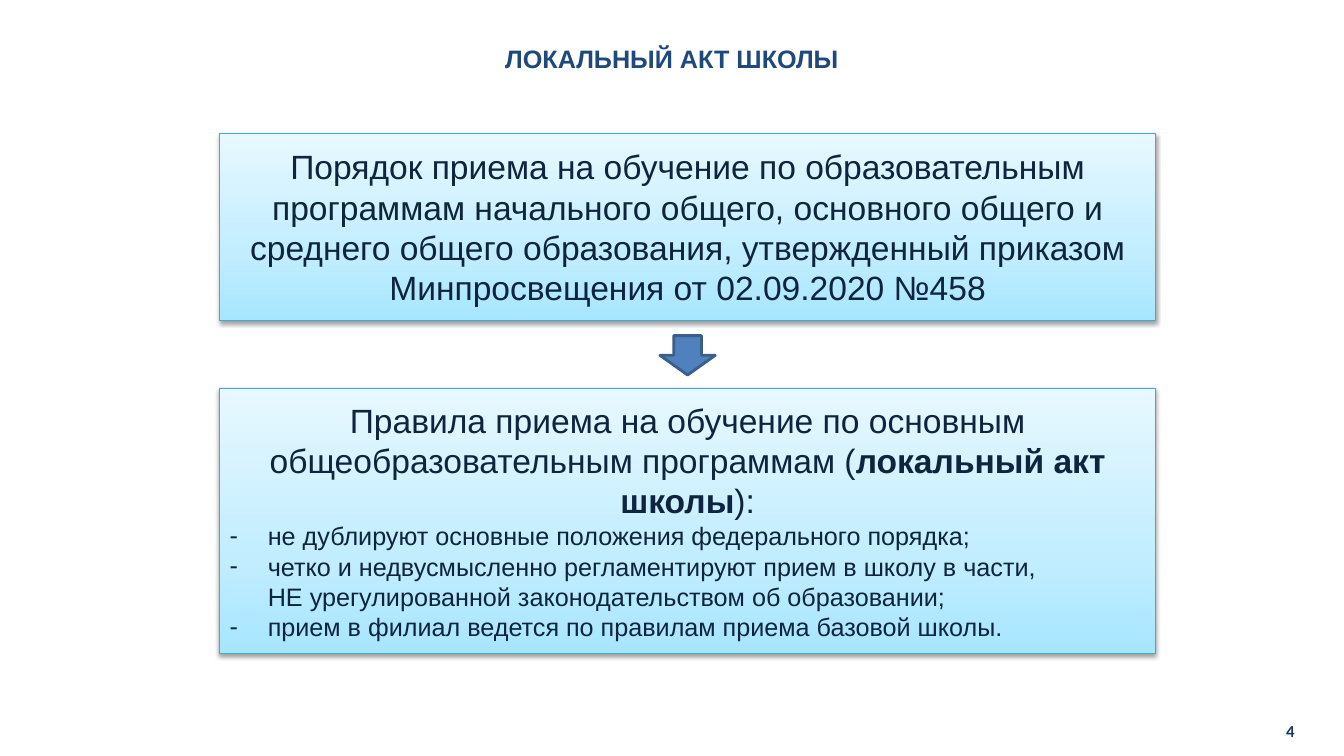
"""Build the slide on the school's local admission act."""
import pptx
import pptx.util
import pptx.dml.color
import pptx.enum.shapes
import pptx.enum.text
import pptx.oxml
import pptx.oxml.ns
from lxml import etree

Inches = pptx.util.Inches
Pt = pptx.util.Pt
ALIGN = pptx.enum.text.PP_ALIGN
ANCHOR = pptx.enum.text.MSO_ANCHOR
SHAPE = pptx.enum.shapes.MSO_SHAPE
qn = pptx.oxml.ns.qn

COLORS = {
    "title": "1F497D",
    "number": "17375E",
    "body": "0F243E",
    "arrow": "4F81BD",
    "arrow_edge": "3A5F8C",
    "panel_edge": "46AAC5",
    "shadow": "000000",
    "deep": "A7E6FF",
    "middle": "C1EDFF",
    "light": "E7F8FF",
}
PANEL_STOPS = [(0, "deep"), (35, "middle"), (100, "light")]
PANEL_LEFT, PANEL_WIDTH = 2.18, 9.29
ARROW_WIDTH = 0.55
HANGING = 0.38

TITLE_FORMAT = {"name": "Arial", "size": Pt(18), "bold": True}
NUMBER_FORMAT = {"name": "Calibri", "size": Pt(12), "bold": True}
HEAD_FORMAT = {"name": "Arial", "size": Pt(24), "bold": False}
STRONG_FORMAT = {**HEAD_FORMAT, "bold": True}
RULE_FORMAT = {**HEAD_FORMAT, "size": Pt(18)}

ORDER_TEXT = (
    "Порядок приема на обучение по образовательным программам начального общего, "
    "основного общего и среднего общего образования, утвержденный приказом "
    "Минпросвещения от 02.09.2020 №458"
)
RULES_HEAD = [
    ("Правила приема на обучение по основным общеобразовательным программам (", HEAD_FORMAT),
    ("локальный акт школы", STRONG_FORMAT),
    ("):", HEAD_FORMAT),
]
RULES = [
    ["не дублируют основные положения федерального порядка;"],
    ["четко и недвусмысленно регламентируют прием в школу в части,",
     "НЕ урегулированной законодательством об образовании;"],
    ["прием в филиал ведется по правилам приема базовой школы."],
]


def rgb(key):
    return pptx.dml.color.RGBColor.from_string(COLORS[key])


def set_all(target, values):
    for name, value in values.items():
        setattr(target, name, value)


def add_run(paragraph, text, values, color):
    run = paragraph.add_run()
    run.text = text
    set_all(run.font, values)
    run.font.color.rgb = rgb(color)


def add_label(slide, place, text, values, color, align, anchor, margins):
    label = slide.shapes.add_textbox(*map(Inches, place))
    side, edge = map(Inches, margins)
    set_all(label.text_frame, {
        "word_wrap": True, "vertical_anchor": anchor,
        "margin_left": side, "margin_right": side,
        "margin_top": edge, "margin_bottom": edge,
    })
    paragraph = label.text_frame.paragraphs[0]
    paragraph.alignment = align
    add_run(paragraph, text, values, color)


def add_color(parent, key):
    return etree.SubElement(parent, qn("a:srgbClr"), val=COLORS[key])


def add_panel(slide, top, height, head):
    panel = slide.shapes.add_shape(
        SHAPE.RECTANGLE, *map(Inches, (PANEL_LEFT, top, PANEL_WIDTH, height)))
    panel.line.color.rgb = rgb("panel_edge")
    panel.line.width = Pt(0.75)
    panel.fill.gradient()
    panel.fill.gradient_angle = 90
    properties = panel.element.spPr
    stops = properties.find(qn("a:gradFill")).find(qn("a:gsLst"))
    for stop in list(stops):
        stops.remove(stop)
    for percent, key in PANEL_STOPS:
        add_color(etree.SubElement(stops, qn("a:gs"), pos=str(percent * 1000)), key)

    panel.shadow.inherit = False
    shadow = etree.SubElement(
        properties.find(qn("a:effectLst")), qn("a:outerShdw"),
        blurRad=str(Pt(3.1)), dist=str(Pt(1.6)), dir="5400000", rotWithShape="0")
    etree.SubElement(add_color(shadow, "shadow"), qn("a:alpha"), val="38000")

    set_all(panel.text_frame, {"word_wrap": True, "vertical_anchor": ANCHOR.MIDDLE})
    paragraph = panel.text_frame.paragraphs[0]
    paragraph.alignment = ALIGN.CENTER
    for text, values in head:
        add_run(paragraph, text, values, "body")
    return panel


def add_rule(panel, lines):
    paragraph = panel.text_frame.add_paragraph()
    paragraph.alignment = ALIGN.LEFT
    properties = paragraph._p.get_or_add_pPr()
    properties.set("marL", str(Inches(HANGING)))
    properties.set("indent", str(-Inches(HANGING)))
    etree.SubElement(properties, qn("a:buFont"), typeface="Arial")
    etree.SubElement(properties, qn("a:buChar"), char="-")
    for index, line in enumerate(lines):
        if index:
            paragraph.add_line_break()
        add_run(paragraph, line, RULE_FORMAT, "body")


def add_down_arrow(slide, top, height):
    left = PANEL_LEFT + (PANEL_WIDTH - ARROW_WIDTH) / 2
    arrow = slide.shapes.add_shape(
        SHAPE.DOWN_ARROW, *map(Inches, (left, top, ARROW_WIDTH, height)))
    arrow.shadow.inherit = False
    arrow.fill.solid()
    arrow.fill.fore_color.rgb = rgb("arrow")
    arrow.line.color.rgb = rgb("arrow_edge")
    arrow.line.width = Pt(2)


def main():
    deck = pptx.Presentation()
    set_all(deck, {"slide_width": Inches(13.34), "slide_height": Inches(7.5)})
    slide = deck.slides.add_slide(deck.slide_layouts[6])
    add_label(slide, (0, 0.36, 13.34, 0.44), "ЛОКАЛЬНЫЙ АКТ ШКОЛЫ",
              TITLE_FORMAT, "title", ALIGN.CENTER, ANCHOR.TOP, (0.13, 0.07))
    add_label(slide, (11.92, 7.05, 1.05, 0.4), "4",
              NUMBER_FORMAT, "number", ALIGN.RIGHT, ANCHOR.MIDDLE, (0.12, 0.06))
    add_down_arrow(slide, 3.33, 0.39)
    add_panel(slide, 1.32, 1.86, [(ORDER_TEXT, HEAD_FORMAT)])
    rules_panel = add_panel(slide, 3.85, 2.63, RULES_HEAD)
    for lines in RULES:
        add_rule(rules_panel, lines)
    deck.save("out.pptx")


if __name__ == "__main__":
    main()
